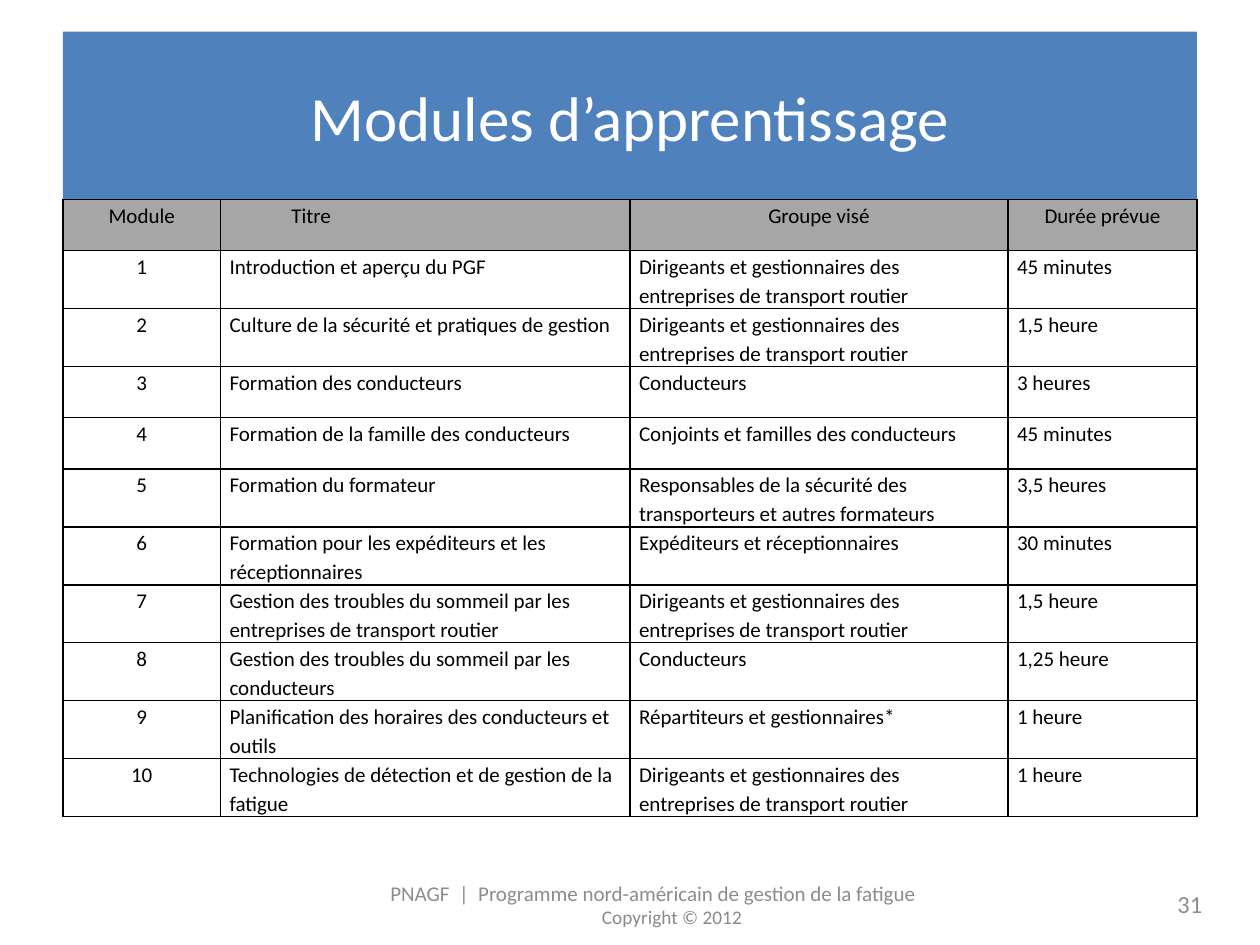
import pptx
import pptx.dml.color
import pptx.enum.shapes
import pptx.enum.text
import pptx.oxml
import pptx.oxml.ns
import pptx.util

Pt = pptx.util.Pt
ALIGN = pptx.enum.text.PP_ALIGN
MIDDLE = pptx.enum.text.MSO_ANCHOR.MIDDLE
FONT = "Calibri"
COLORS = {
    "banner": "4F81BD",
    "header": "A6A6A6",
    "cell": "FFFFFF",
    "ink": "000000",
    "title": "FFFFFF",
    "footer": "8C8C8C",
    "copyright": "898989",
}
COLUMN_WIDTHS = [90, 234, 216, 108]
ROW_HEIGHT = 29.2
HEADINGS = ["Module", "Titre", "Groupe visé", "Durée prévue"]
MANAGERS = "Dirigeants et gestionnaires des entreprises de transport routier"
MODULES = [
    ("Introduction et aperçu du PGF", MANAGERS, "45 minutes"),
    ("Culture de la sécurité et pratiques de gestion", MANAGERS, "1,5 heure"),
    ("Formation des conducteurs", "Conducteurs", "3 heures"),
    ("Formation de la famille des conducteurs",
     "Conjoints et familles des conducteurs", "45 minutes"),
    ("Formation du formateur",
     "Responsables de la sécurité des transporteurs et autres formateurs", "3,5 heures"),
    ("Formation pour les expéditeurs et les réceptionnaires",
     "Expéditeurs et réceptionnaires", "30 minutes"),
    ("Gestion des troubles du sommeil par les entreprises de transport routier",
     MANAGERS, "1,5 heure"),
    ("Gestion des troubles du sommeil par les conducteurs", "Conducteurs", "1,25 heure"),
    ("Planification des horaires des conducteurs et outils",
     "Répartiteurs et gestionnaires*", "1 heure"),
    ("Technologies de détection et de gestion de la fatigue", MANAGERS, "1 heure"),
]


def rgb(name):
    return pptx.dml.color.RGBColor.from_string(COLORS[name])


def write(para, text, size, color, align=ALIGN.LEFT):
    para.alignment = align
    span = para.add_run()
    span.text = text
    span.font.name = FONT
    span.font.size = Pt(size)
    span.font.color.rgb = rgb(color)


def add_text_frame(page, left, top, width, height):
    box = page.shapes.add_textbox(Pt(left), Pt(top), Pt(width), Pt(height))
    frame = box.text_frame
    frame.word_wrap = True
    frame.vertical_anchor = MIDDLE
    return frame


def add_banner(page, left, top, width, height):
    banner = page.shapes.add_shape(
        pptx.enum.shapes.MSO_SHAPE.RECTANGLE, Pt(left), Pt(top), Pt(width), Pt(height))
    banner.shadow.inherit = False
    banner.fill.solid()
    banner.fill.fore_color.rgb = rgb("banner")
    banner.line.fill.background()
    frame = add_text_frame(page, left, top + 3.6, width, height - 6)
    write(frame.paragraphs[0], "Modules d’apprentissage", 36, "title", ALIGN.CENTER)


def add_borders(cell):
    properties = cell._tc.get_or_add_tcPr()
    for position, side in enumerate(("lnL", "lnR", "lnT", "lnB")):
        line = pptx.oxml.parse_xml(
            f'<a:{side} {pptx.oxml.ns.nsdecls("a")} w="{Pt(1)}"><a:solidFill>'
            f'<a:srgbClr val="{COLORS["ink"]}"/></a:solidFill></a:{side}>')
        properties.insert(position, line)


def fill_cell(cell, text, fill, align):
    cell.margin_left = cell.margin_right = Pt(5.2)
    cell.margin_top = cell.margin_bottom = Pt(0)
    cell.fill.solid()
    cell.fill.fore_color.rgb = rgb(fill)
    add_borders(cell)
    para = cell.text_frame.paragraphs[0]
    para.line_spacing = 1.15
    write(para, text, 12, "ink", align)


def add_module_table(page, left, top, width):
    rows = [HEADINGS] + [(str(number), *module) for number, module in enumerate(MODULES, 1)]
    table = page.shapes.add_table(
        len(rows), len(HEADINGS), Pt(left), Pt(top), Pt(width),
        Pt(ROW_HEIGHT * len(rows))).table
    for column, share in zip(table.columns, COLUMN_WIDTHS):
        column.width = Pt(width * share / sum(COLUMN_WIDTHS))
    for row_index, texts in enumerate(rows):
        table.rows[row_index].height = Pt(ROW_HEIGHT)
        is_header = row_index == 0
        for column_index, text in enumerate(texts):
            centred = column_index == 0 or (is_header and column_index != 1)
            fill_cell(table.cell(row_index, column_index), text,
                      "header" if is_header else "cell",
                      ALIGN.CENTER if centred else ALIGN.LEFT)
    # The "Titre" heading starts with a first-line indent
    title_para = table.cell(0, 1).text_frame.paragraphs[0]
    title_para._p.get_or_add_pPr().set("indent", str(Pt(35.3)))


def add_footer(page, left, top, width, height):
    frame = add_text_frame(page, left, top, width, height)
    frame.margin_bottom = Pt(18.2)
    write(frame.paragraphs[0],
          "PNAGF  |  Programme nord-américain de gestion de la fatigue", 12, "footer")
    write(frame.add_paragraph(), "Copyright © 2012", 11, "copyright", ALIGN.CENTER)


def add_page_number(page, left, top, width, height):
    frame = add_text_frame(page, left, top, width, height)
    write(frame.paragraphs[0], "31", 14, "footer", ALIGN.RIGHT)


def main():
    deck = pptx.Presentation()
    deck.slide_width, deck.slide_height = Pt(720), Pt(540)
    page = deck.slides.add_slide(deck.slide_layouts[6])
    add_banner(page, 36, 18, 648, 96)
    add_module_table(page, 36, 114, 648)
    add_footer(page, 216, 510.5, 336, 27.4)
    add_page_number(page, 526.3, 501.8, 167.8, 28.8)
    deck.save("out.pptx")


if __name__ == "__main__":
    main()
